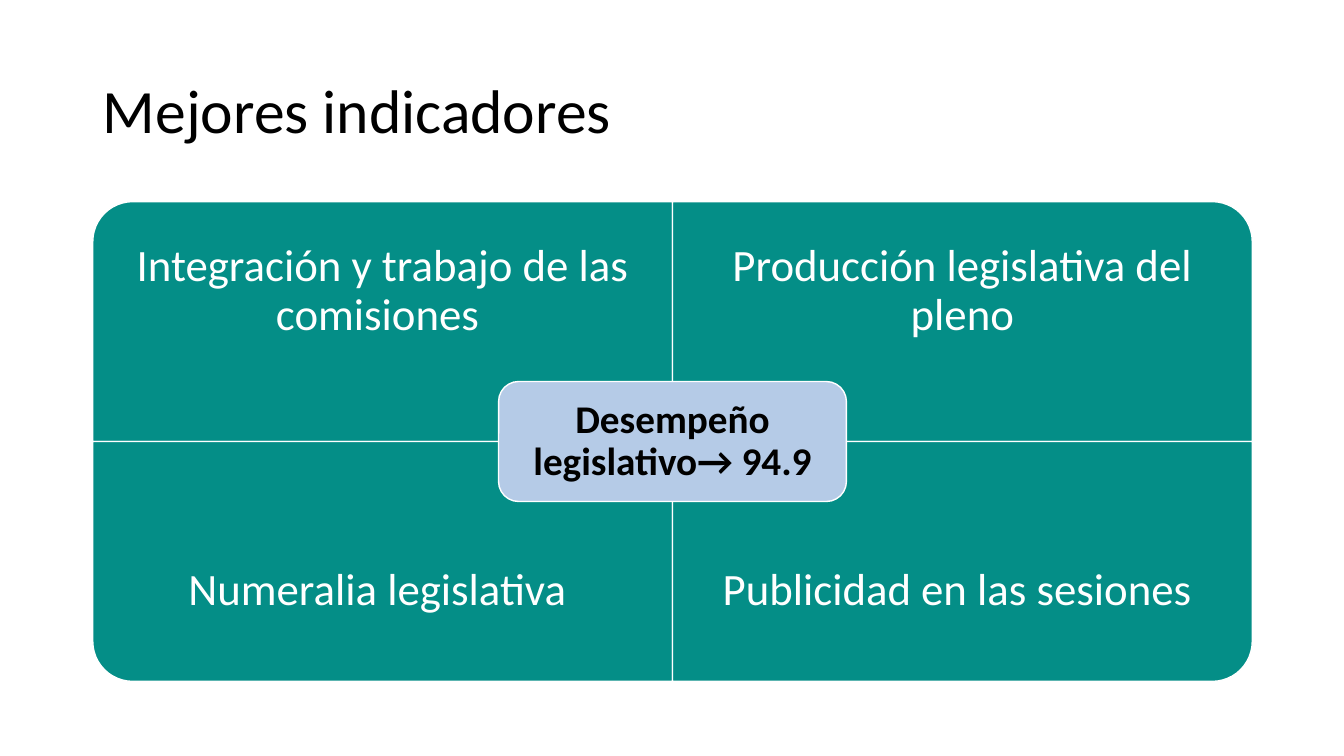
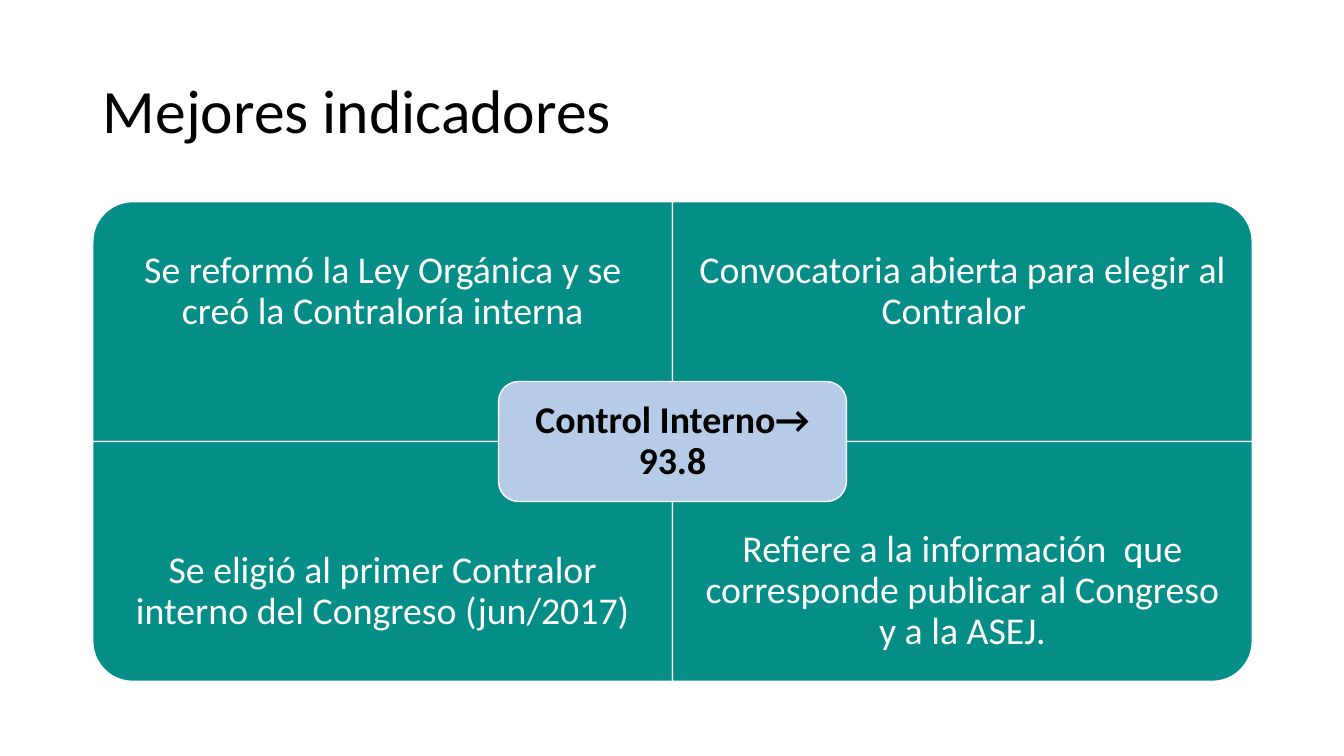
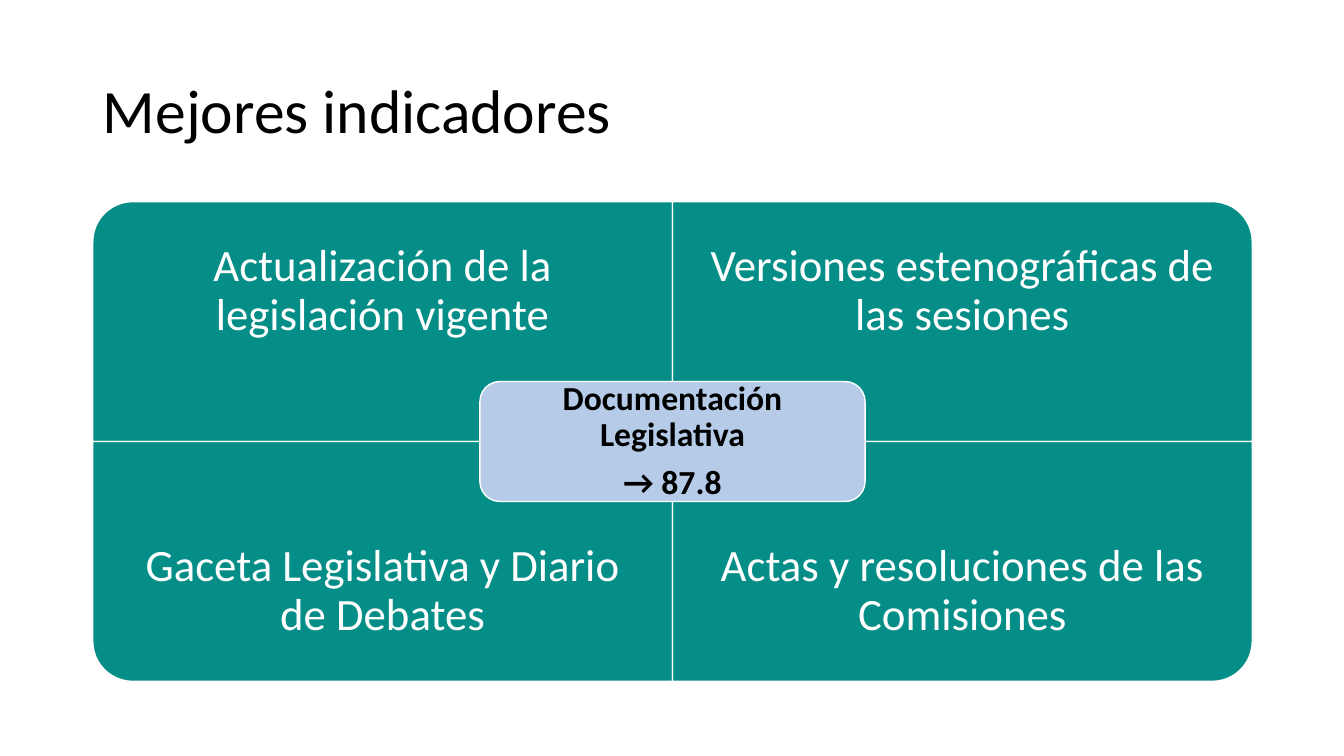
from dataclasses import dataclass

from pptx import Presentation
from pptx.dml.color import RGBColor
from pptx.enum.shapes import MSO_SHAPE
from pptx.enum.text import MSO_ANCHOR, MSO_AUTO_SIZE, PP_ALIGN
from pptx.util import Inches, Pt

FONT = "Calibri"
TEAL, BLUE, WHITE, BLACK = "048E87", "B5CBE7", "FFFFFF", "000000"

TITLE = "Mejores indicadores"
LEFT, TOP = 0.92, 2.0
CELL_W, CELL_H = 5.75, 2.38
LABEL_H, HUB_H = 0.75 * CELL_H, 0.5 * CELL_H
# Rotation that turns the rounded corner of each cell outwards, row by row
ROTATIONS = ((270, 0), (180, 90))


@dataclass
class Matrix:
    cells: tuple[tuple[str, str], tuple[str, str]]
    cell_size: int
    cell_inset: float
    hub: tuple[str, ...]
    hub_size: int
    hub_inset: float
    hub_w: float = 3.45


MATRICES = (
    Matrix(
        (("Integración y trabajo de las comisiones ", "Producción legislativa del pleno"),
         ("Numeralia legislativa ", "Publicidad en las sesiones ")),
        32, 0.25, ("Desempeño legislativo→ 94.9",), 28, 0.12),
    Matrix(
        (("Se reformó la Ley Orgánica y se creó la Contraloría interna",
          "Convocatoria abierta para elegir al Contralor  "),
         ("Se eligió al primer Contralor interno del Congreso (jun/2017)",
          "Refiere a la información  que corresponde publicar al Congreso y a la ASEJ.")),
        27, 0.21, ("Control Interno→ 93.8",), 27, 0.11),
    Matrix(
        (("Actualización de la legislación vigente", "Versiones estenográficas de las sesiones"),
         ("Gaceta Legislativa y Diario de Debates", "Actas y resoluciones de las Comisiones")),
        32, 0.25, ("Documentación Legislativa", "→ 87.8"), 24, 0.1, hub_w=3.82),
)


def rgb(value: str) -> RGBColor:
    return RGBColor.from_string(value)


def set_attrs(target, values: dict) -> None:
    for name, value in values.items():
        setattr(target, name, value)


def write(sp, lines: tuple[str, ...], size: int, color: str, inset: float = 0.1,
          bold: bool = False, align=PP_ALIGN.CENTER, space: float = 0.35) -> None:
    """Fill a shape with one paragraph per line; space is a share of the text size."""
    tf = sp.text_frame
    set_attrs(tf, {"word_wrap": True, "auto_size": MSO_AUTO_SIZE.NONE,
                   "vertical_anchor": MSO_ANCHOR.MIDDLE})
    set_attrs(tf, {f"margin_{side}": Inches(inset)
                   for side in ("left", "top", "right", "bottom")})
    for i, line in enumerate(lines):
        p = tf.add_paragraph() if i else tf.paragraphs[0]
        set_attrs(p, {"alignment": align, "line_spacing": 0.9,
                      "space_before": Pt(0), "space_after": Pt(space * size)})
        r = p.add_run()
        r.text = line
        set_attrs(r.font, {"name": FONT, "size": Pt(size), "bold": bold})
        r.font.color.rgb = rgb(color)


def add_box(slide, kind, cx: float, cy: float, w: float, h: float, fill: str):
    """Add a white-edged shape centred on (cx, cy)."""
    sp = slide.shapes.add_shape(kind, Inches(cx - w / 2), Inches(cy - h / 2),
                                Inches(w), Inches(h))
    sp.shadow.inherit = False
    sp.fill.solid()
    sp.fill.fore_color.rgb = rgb(fill)
    sp.line.color.rgb = rgb(WHITE)
    sp.line.width = Pt(1)
    return sp


def add_title(slide) -> None:
    sp = slide.shapes.title
    set_attrs(sp, {"left": Inches(LEFT), "top": Inches(0.4),
                   "width": Inches(2 * CELL_W), "height": Inches(1.45)})
    write(sp, (TITLE,), 44, BLACK, align=PP_ALIGN.LEFT, space=0)


def add_cell(slide, matrix: Matrix, row: int, col: int) -> None:
    x, y = LEFT + col * CELL_W, TOP + row * CELL_H
    rotation = ROTATIONS[row][col]
    w, h = (CELL_W, CELL_H) if rotation % 180 == 0 else (CELL_H, CELL_W)
    sp = add_box(slide, MSO_SHAPE.ROUND_1_RECTANGLE,
                 x + CELL_W / 2, y + CELL_H / 2, w, h, TEAL)
    sp.rotation = rotation
    label_y = y + row * (CELL_H - LABEL_H)
    label = slide.shapes.add_textbox(Inches(x), Inches(label_y),
                                     Inches(CELL_W), Inches(LABEL_H))
    write(label, (matrix.cells[row][col],), matrix.cell_size, WHITE, matrix.cell_inset)


def add_matrix(slide, matrix: Matrix) -> None:
    for row in range(2):
        for col in range(2):
            add_cell(slide, matrix, row, col)
    hub = add_box(slide, MSO_SHAPE.ROUNDED_RECTANGLE,
                  LEFT + CELL_W, TOP + CELL_H, matrix.hub_w, HUB_H, BLUE)
    write(hub, matrix.hub, matrix.hub_size, BLACK, matrix.hub_inset, bold=True)


def main() -> None:
    prs = Presentation()
    set_attrs(prs, {"slide_width": Inches(13.33), "slide_height": Inches(7.5)})
    for matrix in MATRICES:
        slide = prs.slides.add_slide(prs.slide_layouts[5])
        add_title(slide)
        add_matrix(slide, matrix)
    prs.save("out.pptx")


if __name__ == "__main__":
    main()
